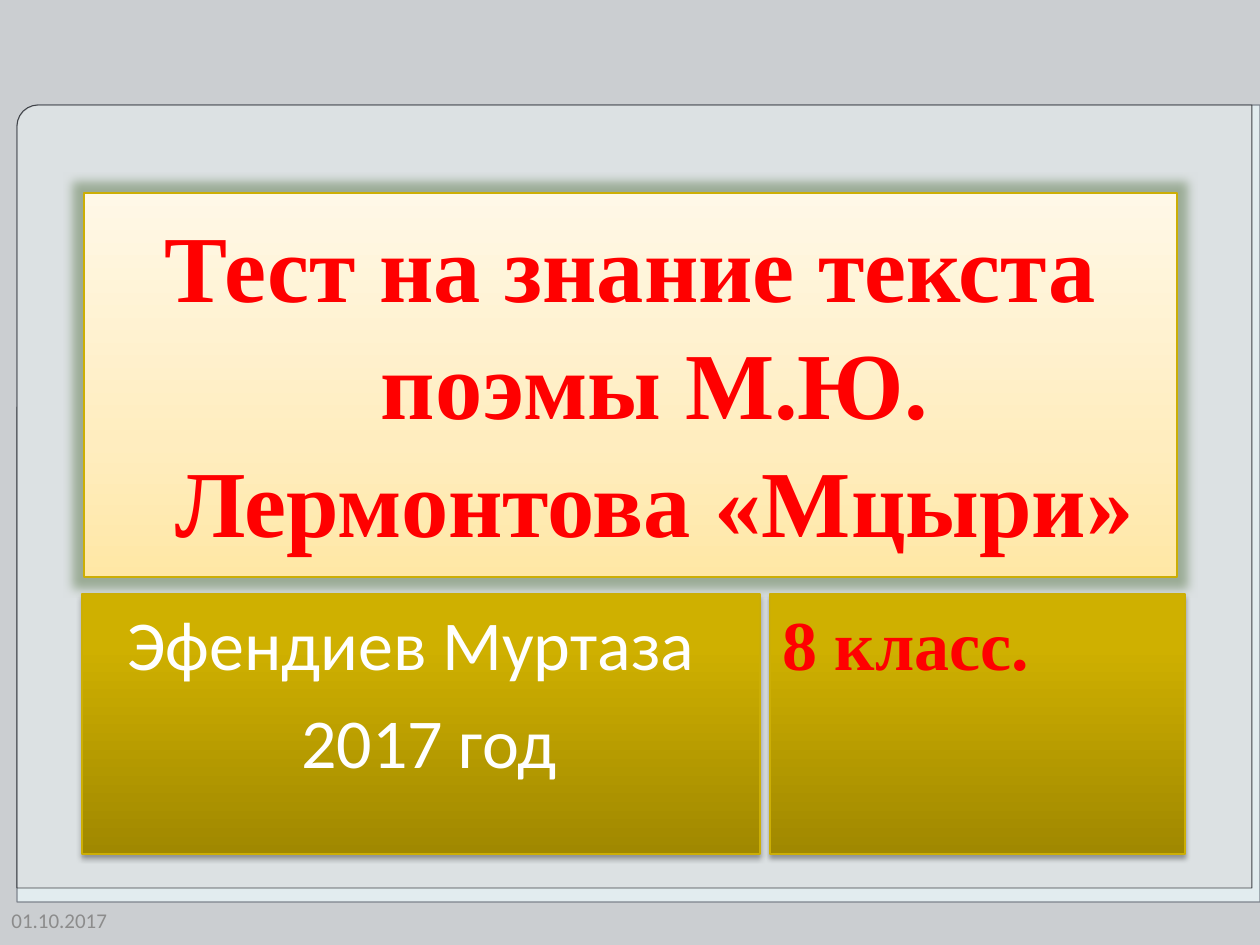
from copy import deepcopy

from lxml import etree
from pptx import Presentation
from pptx import util as u
from pptx.dml.color import RGBColor
from pptx.enum import shapes, text
from pptx.oxml.ns import qn

SCALE = 914400 // 126
COLORS = {"back": "CBCED1", "sheet": "E2ECEF", "sheet_line": "7E848D",
          "panel": "D8D8D8", "panel_line": "3F4247", "gold": "CCAE05",
          "red": "FF0000", "white": "FFFFFF", "date": "8C8C8C",
          "glow": "6F8862", "shadow": "000000"}
CREAM = [(0, "FFE7A5"), (0.35, "FFEDBF"), (1, "FFF8E7")]
OLIVE = [(0, "A08800"), (0.8, "CFB000"), (1, "D0B100")]
HEADING = {"name": "Times New Roman", "bold": True}
PLAIN = {"name": "Calibri", "bold": False}

# Content: rounded panels, then framed texts with (text, left indent, hanging)
PANELS = [((17, 105, 1243, 797), "sheet", "sheet_line", 0.75, 100),
          ((17, 105, 1235, 783), "panel", "panel_line", 0.5, 50)]
TITLE = {"frame": (84, 193, 1093, 384), "stops": CREAM, "color": "red",
         "font": {**HEADING, "size": u.Pt(54)},
         "lines": [("Тест на знание текста поэмы М.Ю. Лермонтова «Мцыри»", 48, -48)],
         "format": {"alignment": text.PP_ALIGN.CENTER, "line_spacing": 1.04}}
CARDS = [
    {"frame": (82, 594, 678, 260), "stops": OLIVE, "color": "white",
     "font": {**PLAIN, "size": u.Pt(40)},
     "lines": [("Эфендиев Муртаза", 33, 0), ("2017 год", 207, 0)]},
    {"frame": (770, 594, 415, 260), "stops": OLIVE, "color": "red",
     "font": {**HEADING, "size": u.Pt(40)}, "lines": [("8 класс.", 0, 0)]},
]
DATE = {"frame": (-1, 895, 147, 50), "color": "date",
        "font": {**PLAIN, "size": u.Pt(12)}, "lines": [("01.10.2017", 0, 0)]}


def px(value):
    return u.Emu(value * SCALE)


def rgb(name):
    return RGBColor.from_string(COLORS.get(name, name))


def assign(target, values):
    for key, value in values.items():
        setattr(target, key, value)


def place(shape, frame):
    assign(shape, dict(zip(("left", "top", "width", "height"), map(px, frame))))


def child(parent, tag, **attributes):
    return etree.SubElement(parent, qn(tag), {k: str(v) for k, v in attributes.items()})


def add_effect(shape, tag, color, alpha, **attributes):
    shape.shadow.inherit = False
    effects = shape._element.spPr.find(qn("a:effectLst"))
    tint = child(child(effects, tag, **attributes), "a:srgbClr", val=COLORS[color])
    child(tint, "a:alpha", val=alpha * 1000)


def paint(shape, stops):
    shape.fill.gradient()
    shape.fill.gradient_angle = 90
    stop_list = shape._element.spPr.find(".//" + qn("a:gsLst"))
    stop_list.append(deepcopy(stop_list[0]))
    for stop, (position, color) in zip(shape.fill.gradient_stops, stops):
        stop.position = position
        stop.color.rgb = rgb(color)
    shape.line.color.rgb = rgb("gold")
    shape.line.width = u.Pt(0.75)


def write(shape, item, anchor=text.MSO_ANCHOR.TOP):
    box = shape.text_frame
    assign(box, {"word_wrap": True, "auto_size": text.MSO_AUTO_SIZE.NONE,
                 "vertical_anchor": anchor})
    for number, (words, left, hanging) in enumerate(item["lines"]):
        para = box.add_paragraph() if number else box.paragraphs[0]
        assign(para, {"alignment": text.PP_ALIGN.LEFT,
                      "space_before": u.Pt(8 if number else 0),
                      **item.get("format", {})})
        properties = para._p.get_or_add_pPr()
        properties.set("marL", str(px(left)))
        properties.set("indent", str(px(hanging)))
        span = para.add_run()
        span.text = words
        assign(span.font, item["font"])
        span.font.color.rgb = rgb(item["color"])


deck = Presentation()
assign(deck, {"slide_width": u.Inches(10), "slide_height": u.Inches(7.5)})
page = deck.slides.add_slide(deck.slide_layouts[5])
page.background.fill.solid()
page.background.fill.fore_color.rgb = rgb("back")

# Rounded panels behind the text
for frame, fill, line, width, opacity in PANELS:
    panel = page.shapes.add_shape(shapes.MSO_SHAPE.ROUND_1_RECTANGLE, *map(px, frame))
    panel.adjustments[0] = 0.027
    panel._element.spPr.xfrm.set("flipH", "1")
    panel.shadow.inherit = False
    panel.fill.solid()
    panel.fill.fore_color.rgb = rgb(fill)
    tint = panel._element.spPr.find(qn("a:solidFill"))[0]
    child(tint, "a:alpha", val=opacity * 1000)
    panel.line.color.rgb = rgb(line)
    panel.line.width = u.Pt(width)

# Date in the corner
date = page.shapes.add_textbox(*map(px, DATE["frame"]))
write(date, DATE, text.MSO_ANCHOR.MIDDLE)

# Title with a soft glow
title = page.shapes.title
place(title, TITLE["frame"])
paint(title, TITLE["stops"])
add_effect(title, "a:glow", "glow", 60, rad=px(20))
write(title, TITLE)
title.text_frame.margin_top = px(10)
page.shapes._spTree.append(title._element)

# Author and class cards
for item in CARDS:
    card = page.shapes.add_shape(shapes.MSO_SHAPE.RECTANGLE, *map(px, item["frame"]))
    paint(card, item["stops"])
    add_effect(card, "a:outerShdw", "shadow", 35, blurRad=u.Pt(3.1),
               dist=u.Pt(1.8), dir=5400000, rotWithShape=0)
    write(card, item)

deck.save("out.pptx")
